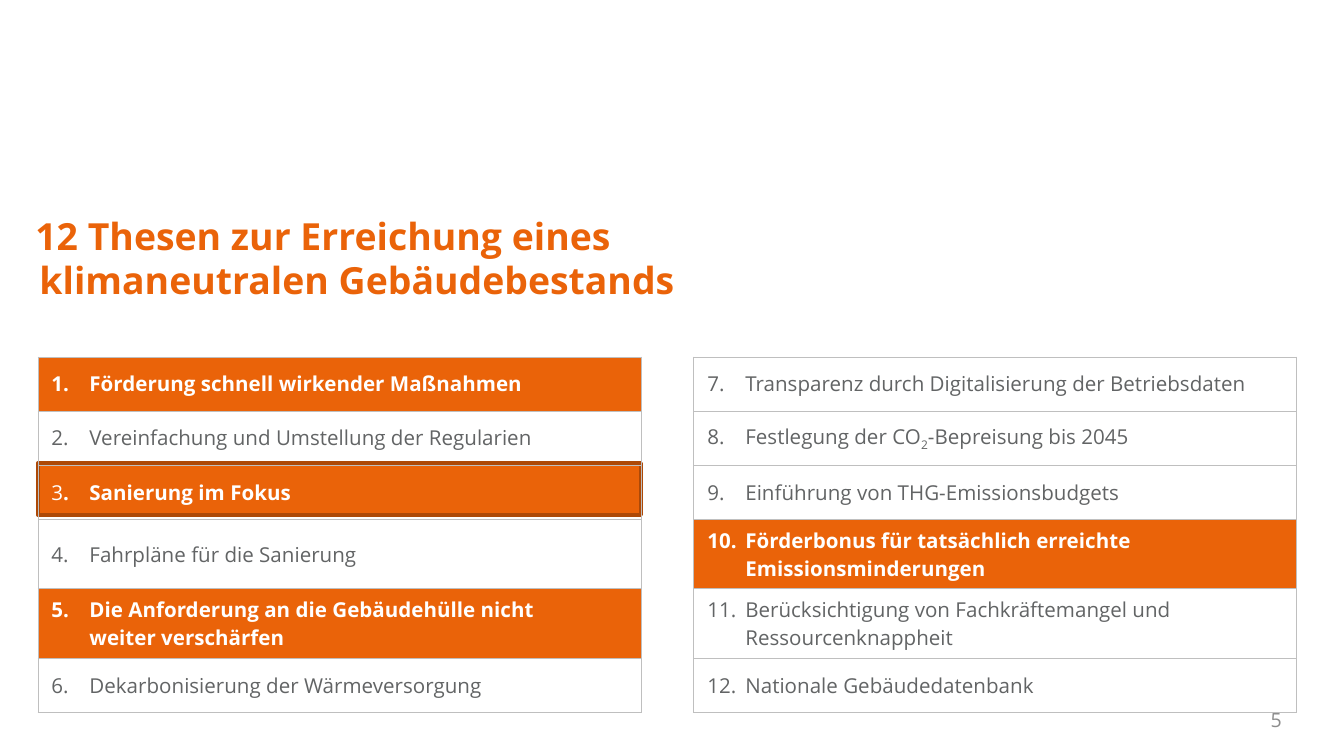
from dataclasses import dataclass

import pptx
import pptx.dml.color
import pptx.enum.shapes
import pptx.enum.text
import pptx.oxml
import pptx.oxml.ns
import pptx.util

EMU_PER_PX = 914400 / 134.4
FONT = "Open Sans"
ORANGE = "EA6309"
DARK_ORANGE = "AD4907"
WHITE = "FFFFFF"
GREY = "626465"
PAGE_GREY = "8D8D8D"
BORDER_GREY = "BFBFBF"
NUMBER_WIDTH = 38


@dataclass(frozen=True)
class Thesis:
    number: int
    lines: tuple[str, ...]
    filled: bool = False
    framed: bool = False


THESES = (
    Thesis(1, ("Förderung schnell wirkender Maßnahmen",), filled=True),
    Thesis(2, ("Vereinfachung und Umstellung der Regularien",)),
    Thesis(3, ("Sanierung im Fokus",), framed=True),
    Thesis(4, ("Fahrpläne für die Sanierung",)),
    Thesis(5, ("Die Anforderung an die Gebäudehülle nicht", "weiter verschärfen"), filled=True),
    Thesis(6, ("Dekarbonisierung der Wärmeversorgung",)),
    Thesis(7, ("Transparenz durch Digitalisierung der Betriebsdaten",)),
    Thesis(8, ("Festlegung der CO_2_-Bepreisung bis 2045",)),
    Thesis(9, ("Einführung von THG-Emissionsbudgets",)),
    Thesis(10, ("Förderbonus für tatsächlich erreichte", "Emissionsminderungen"), filled=True),
    Thesis(11, ("Berücksichtigung von Fachkräftemangel und", "Ressourcenknappheit")),
    Thesis(12, ("Nationale Gebäudedatenbank",)),
)
COLUMN_WIDTHS = (603, 53, 603)
ROW_HEIGHTS = (54, 54, 55, 69, 70, 54)


def px(length: int) -> pptx.util.Emu:
    return pptx.util.Emu(round(length * EMU_PER_PX))


def rgb(value: str) -> pptx.dml.color.RGBColor:
    return pptx.dml.color.RGBColor.from_string(value)


def box(left: int, top: int, width: int, height: int) -> tuple:
    return px(left), px(top), px(width), px(height)


def add_run(paragraph, text: str, size: float, color: str, bold: bool = False):
    run = paragraph.add_run()
    run.text = text
    run.font.name = FONT
    run.font.size = pptx.util.Pt(size)
    run.font.bold = bold
    run.font.color.rgb = rgb(color)
    return run


def set_indent(paragraph, left: int, first_line: int) -> None:
    properties = paragraph._p.get_or_add_pPr()
    properties.set("marL", str(px(left)))
    properties.set("indent", str(px(first_line)))


def set_borders(cell, visible_sides: str) -> None:
    properties = cell._tc.get_or_add_tcPr()
    for side in "LRTB":
        fill = (
            f'<a:solidFill><a:srgbClr val="{BORDER_GREY}"/></a:solidFill>'
            if side in visible_sides
            else "<a:noFill/>"
        )
        properties.append(
            pptx.oxml.parse_xml(
                f'<a:ln{side} {pptx.oxml.ns.nsdecls("a")} w="6350">{fill}</a:ln{side}>'
            )
        )


def write_thesis(cell, thesis: Thesis) -> None:
    emphasized = thesis.filled or thesis.framed
    color = WHITE if emphasized else GREY
    cell.vertical_anchor = pptx.enum.text.MSO_ANCHOR.MIDDLE
    set_borders(cell, "LRTB")
    if thesis.filled:
        cell.fill.solid()
        cell.fill.fore_color.rgb = rgb(ORANGE)
    else:
        cell.fill.background()
    frame = cell.text_frame
    for index, line in enumerate(thesis.lines):
        paragraph = frame.add_paragraph() if index else frame.paragraphs[0]
        set_indent(paragraph, NUMBER_WIDTH, 0 if index else -NUMBER_WIDTH)
        if index == 0:
            add_run(paragraph, str(thesis.number), 11, color, thesis.filled)
            add_run(paragraph, ".\t", 11, color, emphasized)
        for position, part in enumerate(line.split("_")):
            run = add_run(paragraph, part, 11, color, emphasized)
            if position % 2:
                run._r.get_or_add_rPr().set("baseline", "-25000")


def add_frame(slide) -> None:
    frame = slide.shapes.add_shape(
        pptx.enum.shapes.MSO_SHAPE.RECTANGLE, *box(38, 463, 603, 52)
    )
    frame.shadow.inherit = False
    frame.fill.solid()
    frame.fill.fore_color.rgb = rgb(ORANGE)
    frame.line.color.rgb = rgb(DARK_ORANGE)
    frame.line.width = pptx.util.Pt(2)


def add_page_number(slide) -> None:
    frame = slide.shapes.add_textbox(*box(982, 700, 313, 40)).text_frame
    frame.word_wrap = True
    frame.vertical_anchor = pptx.enum.text.MSO_ANCHOR.MIDDLE
    paragraph = frame.paragraphs[0]
    paragraph.alignment = pptx.enum.text.PP_ALIGN.RIGHT
    add_run(paragraph, "5", 10.5, PAGE_GREY)


def write_title(slide) -> None:
    title = slide.shapes.title
    title.left, title.top, title.width, title.height = box(22, 202, 730, 117)
    frame = title.text_frame
    frame.word_wrap = True
    frame.auto_size = pptx.enum.text.MSO_AUTO_SIZE.NONE
    frame.vertical_anchor = pptx.enum.text.MSO_ANCHOR.TOP
    frame.margin_top = px(12)
    paragraph = frame.paragraphs[0]
    set_indent(paragraph, 4, -4)
    paragraph.alignment = pptx.enum.text.PP_ALIGN.LEFT
    paragraph.line_spacing = pptx.util.Pt(23.6)
    add_run(paragraph, "12 Thesen zur Erreichung eines", 20, ORANGE, True)
    paragraph.add_line_break()
    add_run(paragraph, "klimaneutralen Gebäudebestands", 20, ORANGE, True)


def add_theses(slide) -> None:
    row_count = len(ROW_HEIGHTS)
    table = slide.shapes.add_table(
        row_count,
        len(COLUMN_WIDTHS),
        *box(38, 357, sum(COLUMN_WIDTHS), sum(ROW_HEIGHTS)),
    ).table
    table.first_row = False
    table.horz_banding = False
    for column, width in zip(table.columns, COLUMN_WIDTHS):
        column.width = px(width)
    for index, height in enumerate(ROW_HEIGHTS):
        table.rows[index].height = px(height)
        gap = table.cell(index, 1)
        gap.margin_top = gap.margin_bottom = 0
        set_borders(gap, "LR")
        gap.fill.background()
    for index, thesis in enumerate(THESES):
        half, row = divmod(index, row_count)
        write_thesis(table.cell(row, 2 * half), thesis)


def main() -> None:
    presentation = pptx.Presentation()
    presentation.slide_width = px(1344)
    presentation.slide_height = px(756)
    slide = presentation.slides.add_slide(presentation.slide_layouts[5])
    add_frame(slide)
    add_page_number(slide)
    write_title(slide)
    add_theses(slide)
    presentation.save("out.pptx")


if __name__ == "__main__":
    main()
